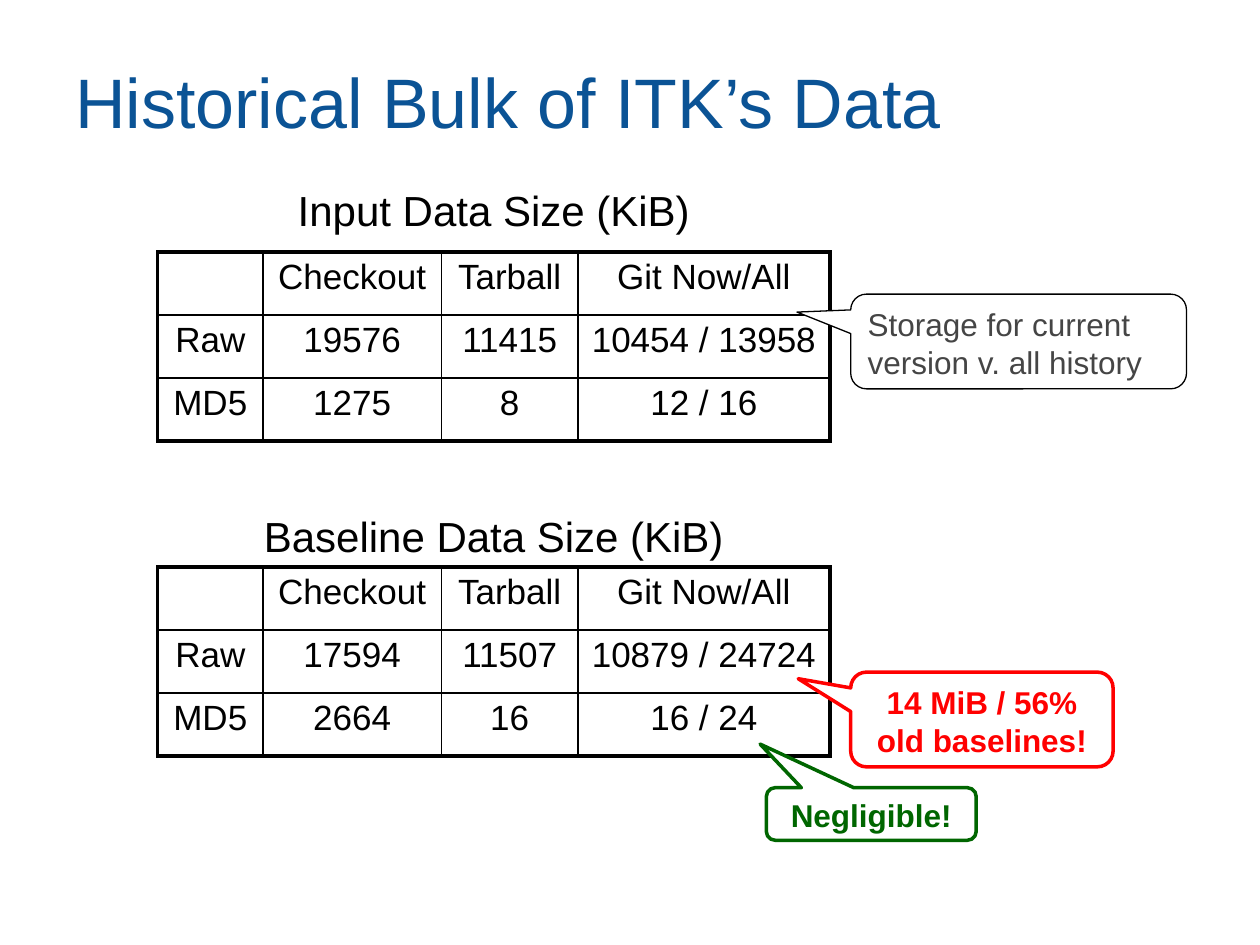
"""Build the slide on the historical bulk of ITK's data."""
from lxml.etree import SubElement
from pptx import Presentation
from pptx.dml.color import RGBColor
from pptx.enum.shapes import MSO_SHAPE
from pptx.enum.text import MSO_ANCHOR, PP_ALIGN
from pptx.oxml.ns import qn
from pptx.util import Cm, Pt

BLACK = RGBColor(0x00, 0x00, 0x00)
WHITE = RGBColor(0xFF, 0xFF, 0xFF)
BLUE = RGBColor(0x0B, 0x53, 0x95)
GRAY = RGBColor(0x45, 0x45, 0x45)
RED = RGBColor(0xFF, 0x00, 0x00)
GREEN = RGBColor(0x00, 0x66, 0x00)

TABLE_LEFT = 3.18
TABLE_WIDTH = 13.55
ROW_HEIGHT = 1.27
COLUMN_WIDTHS = [2.12, 3.6, 2.75, 5.08]
HEADER = ["", "Checkout", "Tarball", "Git Now/All"]


def write_text(text_frame, text, size, color, alignment=PP_ALIGN.CENTER, bold=False):
    text_frame.word_wrap = True
    paragraph = text_frame.paragraphs[0]
    paragraph.alignment = alignment
    run = paragraph.add_run()
    run.text = text
    run.font.name = "Arial"
    run.font.size = Pt(size)
    run.font.bold = bold
    run.font.color.rgb = color


def add_border(cell, side, width):
    line = SubElement(cell._tc.get_or_add_tcPr(), qn(f"a:ln{side}"), w=str(Pt(width)))
    fill = SubElement(line, qn("a:solidFill"))
    SubElement(fill, qn("a:srgbClr"), val=str(BLACK))


presentation = Presentation()
presentation.slide_width = Cm(25.4)
presentation.slide_height = Cm(19.05)
slide = presentation.slides.add_slide(presentation.slide_layouts[6])

title = slide.shapes.add_textbox(Cm(1.27), Cm(0.43), Cm(22.86), Cm(3.18))
title.text_frame.vertical_anchor = MSO_ANCHOR.MIDDLE
write_text(title.text_frame, "Historical Bulk of ITK’s Data", 40, BLUE, PP_ALIGN.LEFT)

data_tables = [
    ("Input Data Size (KiB)", 3.6, 5.08,
     [["Raw", "19576", "11415", "10454 / 13958"], ["MD5", "1275", "8", "12 / 16"]]),
    ("Baseline Data Size (KiB)", 10.16, 11.43,
     [["Raw", "17594", "11507", "10879 / 24724"], ["MD5", "2664", "16", "16 / 24"]]),
]
for heading, heading_top, table_top, body in data_tables:
    rows = [HEADER] + body
    caption = slide.shapes.add_textbox(
        Cm(TABLE_LEFT), Cm(heading_top), Cm(TABLE_WIDTH), Cm(1.27))
    write_text(caption.text_frame, heading, 24, BLACK)

    table = slide.shapes.add_table(
        len(rows), len(HEADER), Cm(TABLE_LEFT), Cm(table_top),
        Cm(TABLE_WIDTH), Cm(ROW_HEIGHT * len(rows))).table
    table.first_row = False
    table.horz_banding = False
    for column, width in zip(table.columns, COLUMN_WIDTHS):
        column.width = Cm(width)

    for row_index, values in enumerate(rows):
        table.rows[row_index].height = Cm(ROW_HEIGHT)
        for column_index, value in enumerate(values):
            cell = table.cell(row_index, column_index)
            outer_sides = {
                "L": column_index == 0,
                "R": column_index == len(HEADER) - 1,
                "T": row_index == 0,
                "B": row_index == len(rows) - 1,
            }
            for side, is_outer in outer_sides.items():
                add_border(cell, side, 2.25 if is_outer else 1)
            cell.fill.background()
            if value:
                write_text(cell.text_frame, value, 20, BLACK)

callouts = [
    ("Storage for current version v. all history", (17.15, 5.93, 6.77, 1.91),
     (-0.66, -0.31), BLACK, 0.75, GRAY, PP_ALIGN.LEFT, False),
    ("14 MiB / 56% old baselines!", (17.15, 13.55, 5.29, 1.91),
     (-0.7, -0.43), RED, 2, RED, PP_ALIGN.CENTER, True),
    ("Negligible!", (15.45, 15.88, 4.23, 1.06),
     (-0.53, -1.33), GREEN, 2, GREEN, PP_ALIGN.CENTER, True),
]
for text, box, pointer, line_color, line_width, text_color, alignment, bold in callouts:
    callout = slide.shapes.add_shape(
        MSO_SHAPE.ROUNDED_RECTANGULAR_CALLOUT, *[Cm(length) for length in box])
    callout.shadow.inherit = False
    callout.adjustments[0], callout.adjustments[1] = pointer
    callout.fill.solid()
    callout.fill.fore_color.rgb = WHITE
    callout.line.color.rgb = line_color
    callout.line.width = Pt(line_width)
    callout.text_frame.vertical_anchor = MSO_ANCHOR.TOP
    write_text(callout.text_frame, text, 18, text_color, alignment, bold)

presentation.save("out.pptx")
